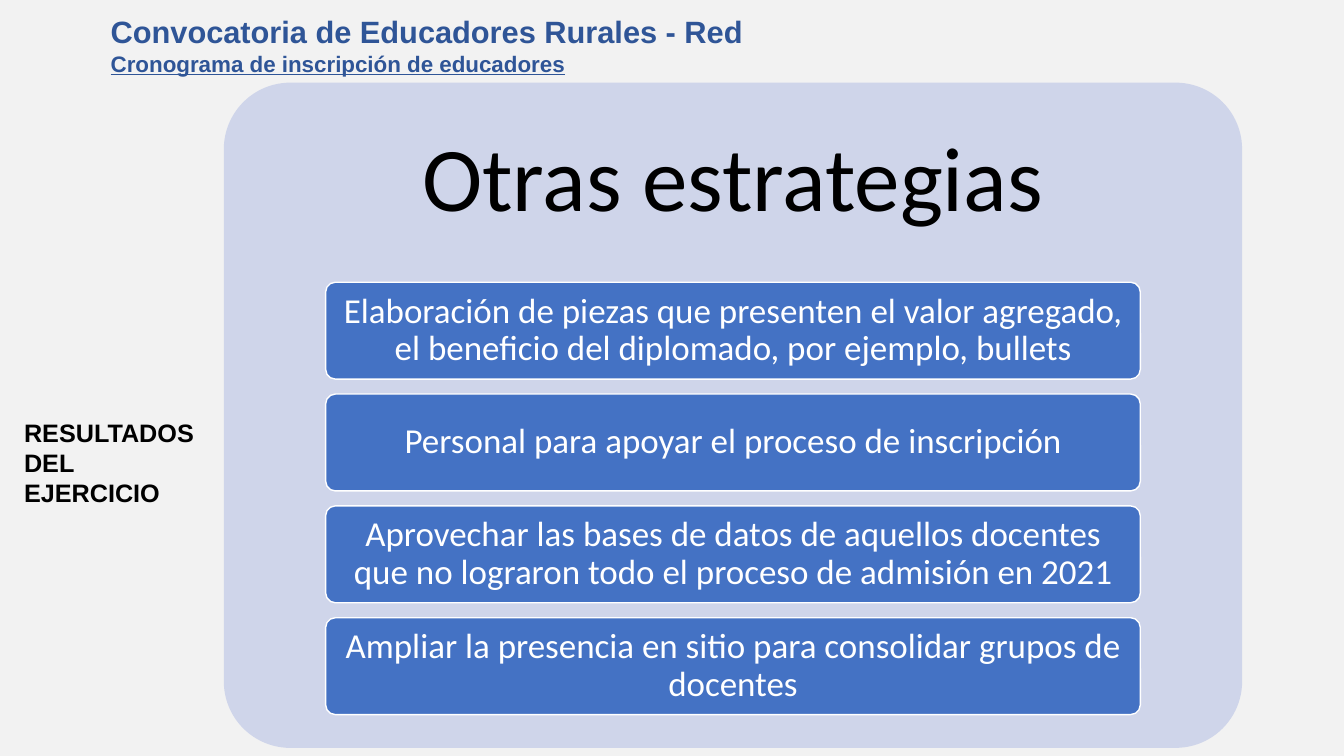
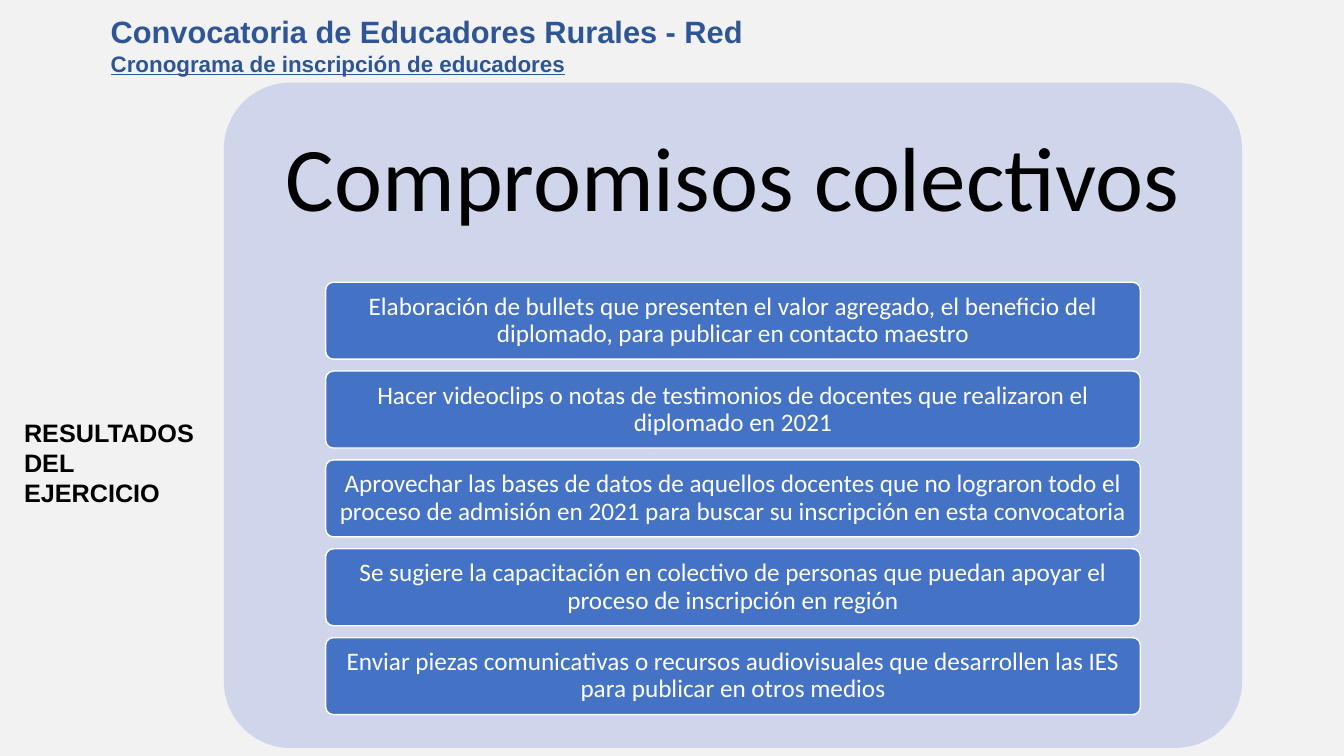
from dataclasses import dataclass

import pptx
import pptx.dml.color
import pptx.enum.shapes
import pptx.enum.text
import pptx.presentation
import pptx.shapes.autoshape
import pptx.slide
import pptx.text.text
import pptx.util
from pptx.util import Inches

Align = pptx.enum.text.PP_ALIGN
Anchor = pptx.enum.text.MSO_ANCHOR

COLORS = {
    "background": "F2F2F2",
    "header": "2F5597",
    "panel": "CFD5EA",
    "bar": "4472C4",
    "light": "FFFFFF",
    "dark": "000000",
}
HEADER = "Convocatoria de Educadores Rurales - Red"
SUBHEADER = "Cronograma de inscripción de educadores"
SIDE_LABEL = "RESULTADOS DEL EJERCICIO"

TITLE_ONLY_LAYOUT = 5
BARS_HEIGHT = 4.29
GAP_RATIO = 2 / 13
INSET_RATIO = 0.07


@dataclass(frozen=True)
class Area:
    left: float
    top: float
    width: float
    height: float

    def lengths(self) -> tuple:
        return tuple(map(Inches, (self.left, self.top, self.width, self.height)))


@dataclass(frozen=True)
class Section:
    heading: str
    items: tuple[str, ...]
    size: int


HEADER_AREA = Area(1, 0.08, 8.73, 0.74)
SIDE_AREA = Area(0.14, 4.09, 2.08, 1.01)
PANEL_AREA = Area(2.22, 0.82, 10.1, 6.6)
HEADING_AREA = Area(2.22, 0.82, 10.1, 1.98)
BARS_AREA = Area(3.23, 2.8, 8.08, BARS_HEIGHT)

SECTIONS = (
    Section(
        "Otras estrategias",
        (
            "Elaboración de piezas que presenten el valor agregado, el beneficio del diplomado, "
            "por ejemplo, bullets",
            "Personal para apoyar el proceso de inscripción",
            "Aprovechar las bases de datos de aquellos docentes que no lograron todo el proceso "
            "de admisión en 2021",
            "Ampliar la presencia en sitio para consolidar grupos de docentes",
        ),
        25,
    ),
    Section(
        "Compromisos colectivos",
        (
            "Elaboración de bullets que presenten el valor agregado, el beneficio del diplomado, "
            "para publicar en contacto maestro",
            "Hacer videoclips o notas de testimonios de docentes que realizaron el diplomado "
            "en 2021",
            "Aprovechar las bases de datos de aquellos docentes que no lograron todo el proceso "
            "de admisión en 2021 para buscar su inscripción en esta convocatoria",
            "Se sugiere la capacitación en colectivo de personas que puedan apoyar el proceso "
            "de inscripción en región",
            "Enviar piezas comunicativas o recursos audiovisuales que desarrollen las IES para "
            "publicar en otros medios",
        ),
        18,
    ),
)


def color(name: str) -> pptx.dml.color.RGBColor:
    return pptx.dml.color.RGBColor.from_string(COLORS[name])


def write(
    para: pptx.text.text._Paragraph,
    text: str,
    *,
    size: int,
    tint: str,
    font: str = "Calibri",
    bold: bool = False,
    underline: bool = False,
    align: Align = Align.CENTER,
    spacing: float = 0.9,
) -> None:
    para.alignment = align
    para.line_spacing = spacing
    span = para.add_run()
    span.text = text
    span.font.name = font
    span.font.size = pptx.util.Pt(size)
    span.font.bold = bold
    span.font.underline = underline
    span.font.color.rgb = color(tint)


def set_frame(frame: pptx.text.text.TextFrame, anchor: Anchor, across: float, down: float) -> None:
    frame.word_wrap = True
    frame.auto_size = pptx.enum.text.MSO_AUTO_SIZE.NONE
    frame.vertical_anchor = anchor
    frame.margin_left = frame.margin_right = Inches(across)
    frame.margin_top = frame.margin_bottom = Inches(down)


def add_text_box(page: pptx.slide.Slide, area: Area) -> pptx.text.text.TextFrame:
    frame = page.shapes.add_textbox(*area.lengths()).text_frame
    set_frame(frame, Anchor.TOP, 0.1, 0.05)
    return frame


def add_rounded(page: pptx.slide.Slide, area: Area, fill: str) -> pptx.shapes.autoshape.Shape:
    box = page.shapes.add_shape(
        pptx.enum.shapes.MSO_SHAPE.ROUNDED_RECTANGLE, *area.lengths()
    )
    box.adjustments[0] = 0.1
    box.shadow.inherit = False
    box.fill.solid()
    box.fill.fore_color.rgb = color(fill)
    box.line.fill.background()
    return box


def add_header(page: pptx.slide.Slide) -> None:
    frame = add_text_box(page, HEADER_AREA)
    style = dict(font="Arial", tint="header", bold=True, align=Align.LEFT, spacing=1.0)
    write(frame.paragraphs[0], HEADER, size=22, **style)
    write(frame.add_paragraph(), SUBHEADER, size=16, underline=True, **style)


def add_side_label(page: pptx.slide.Slide) -> None:
    frame = add_text_box(page, SIDE_AREA)
    write(frame.paragraphs[0], SIDE_LABEL, size=18, tint="dark", font="Arial",
          bold=True, align=Align.LEFT, spacing=1.0)


def add_heading_panel(page: pptx.slide.Slide, text: str) -> None:
    panel = add_rounded(page, PANEL_AREA, "panel")
    heading = page.shapes.title
    panel.element.addnext(heading.element)
    heading.left, heading.top, heading.width, heading.height = HEADING_AREA.lengths()
    set_frame(heading.text_frame, Anchor.MIDDLE, 0.27, 0.27)
    write(heading.text_frame.paragraphs[0], text, size=65, tint="dark")


def add_bars(page: pptx.slide.Slide, items: tuple[str, ...], size: int) -> None:
    count = len(items)
    height = BARS_AREA.height / (count + (count - 1) * GAP_RATIO)
    step = height * (1 + GAP_RATIO)
    for index, item in enumerate(items):
        area = Area(BARS_AREA.left, BARS_AREA.top + index * step, BARS_AREA.width, height)
        bar = add_rounded(page, area, "bar")
        bar.line.color.rgb = color("light")
        bar.line.width = pptx.util.Pt(1)
        set_frame(bar.text_frame, Anchor.MIDDLE, height * INSET_RATIO, 0.05)
        write(bar.text_frame.paragraphs[0], item, size=size, tint="light")


def add_section(deck: pptx.presentation.Presentation, section: Section) -> None:
    page = deck.slides.add_slide(deck.slide_layouts[TITLE_ONLY_LAYOUT])
    add_header(page)
    add_heading_panel(page, section.heading)
    add_bars(page, section.items, section.size)
    add_side_label(page)


def main() -> None:
    deck = pptx.Presentation()
    deck.slide_width, deck.slide_height = Inches(13.33), Inches(7.5)
    backdrop = deck.slide_master.background.fill
    backdrop.solid()
    backdrop.fore_color.rgb = color("background")
    for section in SECTIONS:
        add_section(deck, section)
    deck.save("out.pptx")


if __name__ == "__main__":
    main()
